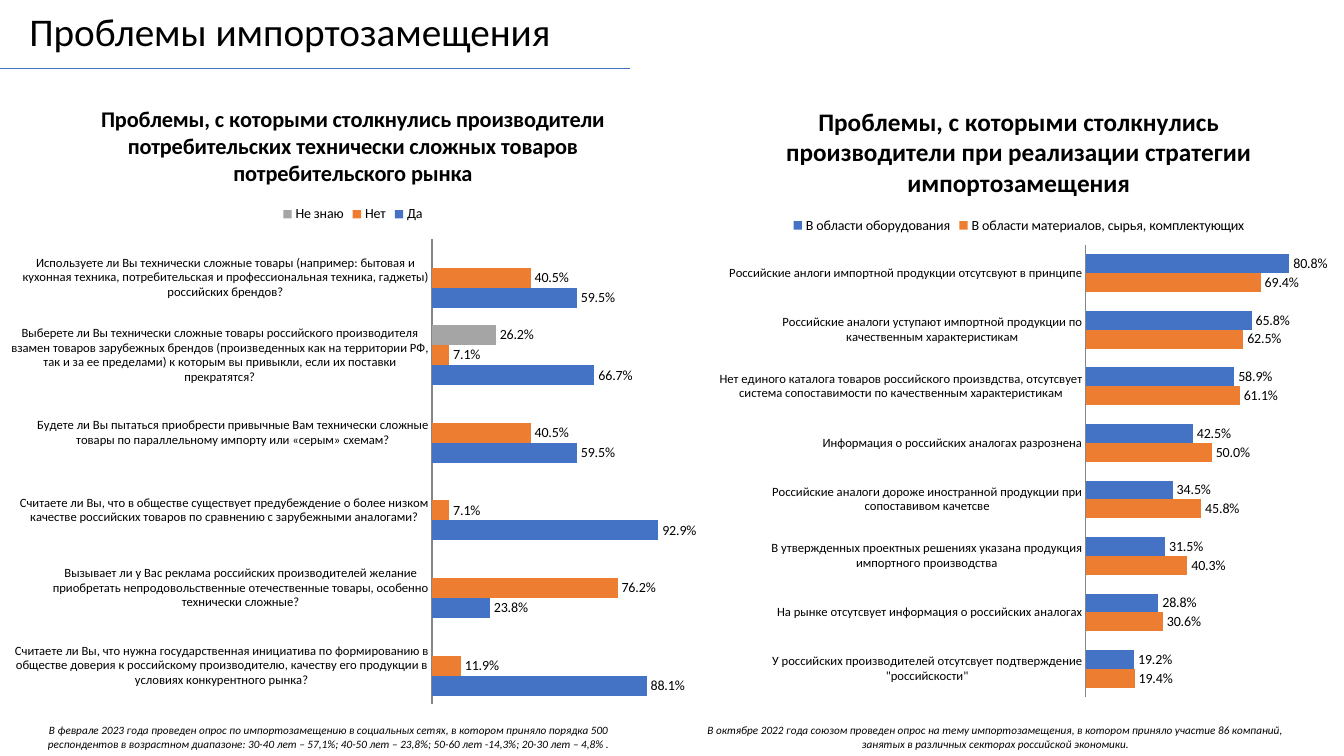
from lxml import etree
from pptx import Presentation
from pptx.chart.data import CategoryChartData
from pptx.dml.color import RGBColor
from pptx.enum.chart import XL_CHART_TYPE, XL_LABEL_POSITION, XL_LEGEND_POSITION, XL_TICK_MARK
from pptx.enum.shapes import MSO_CONNECTOR
from pptx.enum.text import MSO_ANCHOR, MSO_AUTO_SIZE, PP_ALIGN
from pptx.oxml.ns import qn
from pptx.util import Inches, Pt

FONT = "Calibri"
BLACK = RGBColor(0x00, 0x00, 0x00)
BLUE = RGBColor(0x44, 0x72, 0xC4)
ORANGE = RGBColor(0xED, 0x7D, 0x31)
GRAY = RGBColor(0xA5, 0xA5, 0xA5)
AXIS_GRAY = RGBColor(0x86, 0x86, 0x86)

CONSUMER = {
    "title": "Проблемы, с которыми столкнулись производители потребительских "
             "технически сложных товаров потребительского рынка",
    "title_size": 16,
    "gap": 87,
    "maximum": 1.0,
    "cats": [
        "Считаете ли Вы, что нужна государственная инициатива по формированию в обществе "
        "доверия к российскому производителю, качеству его продукции в условиях "
        "конкурентного рынка?",
        "Вызывает ли у Вас реклама российских производителей желание приобретать "
        "непродовольственные отечественные товары, особенно технически сложные?",
        "Считаете ли Вы, что в обществе существует предубеждение о более низком качестве "
        "российских товаров по сравнению с зарубежными аналогами?",
        "Будете ли Вы пытаться приобрести привычные Вам технически сложные товары по "
        "параллельному импорту или «серым» схемам?",
        "Выберете ли Вы технически сложные товары российского производителя взамен товаров "
        "зарубежных брендов (произведенных как на территории РФ, так и за ее пределами) "
        "к которым вы привыкли, если их поставки прекратятся?",
        "Используете ли Вы технически сложные товары (например: бытовая и кухонная техника, "
        "потребительская и профессиональная техника, гаджеты) российских брендов?",
    ],
    "series": [
        ("Да", BLUE, [0.881, 0.238, 0.929, 0.595, 0.667, 0.595]),
        ("Нет", ORANGE, [0.119, 0.762, 0.071, 0.405, 0.071, 0.405]),
        ("Не знаю", GRAY, [None, None, None, None, 0.262, None]),
    ],
}

STRATEGY = {
    "title": "Проблемы, с которыми столкнулись производители при реализации стратегии "
             "импортозамещения",
    "title_size": 18,
    "gap": 100,
    "maximum": 0.9,
    "cats": [
        "У российских производителей отсутсвует подтверждение \"российскости\"",
        "На рынке отсутсвует информация о российских аналогах",
        "В утвержденных проектных решениях указана продукция импортного производства",
        "Российские аналоги дороже иностранной продукции при сопоставивом качетсве",
        "Информация о российских аналогах разрознена",
        "Нет единого каталога товаров российского произвдства, отсутсвует система "
        "сопоставимости по качественным характеристикам",
        "Российские аналоги уступают импортной продукции по качественным характеристикам",
        "Российские анлоги импортной продукции отсутсвуют в принципе",
    ],
    "series": [
        ("В области материалов, сырья, комплектующих", ORANGE,
         [0.194, 0.306, 0.403, 0.458, 0.5, 0.611, 0.625, 0.694]),
        ("В области оборудования", BLUE,
         [0.192, 0.288, 0.315, 0.345, 0.425, 0.589, 0.658, 0.808]),
    ],
}

CONSUMER_NOTE = (
    "В феврале 2023 года проведен опрос по импортозамещению в социальных сетях, в котором "
    "приняло порядка 500 респондентов в возрастном диапазоне: 30-40 лет – 57,1%; "
    "40-50 лет – 23,8%; 50-60 лет -14,3%; 20-30 лет – 4,8% .")
STRATEGY_NOTE = (
    "В октябре 2022 года союзом проведен опрос на тему импортозамещения, в котором приняло "
    "участие 86 компаний, занятых в различных секторах российской экономики.")


def style_font(font, size, bold=False, italic=False):
    """Apply the slide's font with the given size and emphasis."""
    font.name, font.size = FONT, Pt(size)
    font.bold, font.italic = bold, italic
    font.color.rgb = BLACK


def add_header(s, x, y, w, h):
    """Place the slide title and the rule below it."""
    sp = s.shapes.title
    sp.left, sp.top, sp.width, sp.height = (Inches(v) for v in (x, y, w, h))
    tf = sp.text_frame
    tf.word_wrap = False
    tf.auto_size = MSO_AUTO_SIZE.NONE
    tf.vertical_anchor = MSO_ANCHOR.TOP
    p = tf.paragraphs[0]
    p.alignment = PP_ALIGN.LEFT
    r = p.add_run()
    r.text = "Проблемы импортозамещения"
    style_font(r.font, 28)
    rule_y = Inches(y + h + 0.09)
    line = s.shapes.add_connector(MSO_CONNECTOR.STRAIGHT, 0, rule_y, Inches(6.25), rule_y)
    line.line.color.rgb = BLUE
    line.line.width = Pt(1)
    etree.SubElement(line._element.spPr, qn("a:effectLst"))


def set_plot_box(chart, box, plot_box):
    """Fix the inner plot area inside the chart box."""
    x, y, w, h = box
    px, py, pw, ph = plot_box
    area = chart._chartSpace.chart.plotArea
    layout = area.find(qn("c:layout"))
    if layout is None:
        layout = etree.Element(qn("c:layout"))
        area.insert(0, layout)
    manual = etree.SubElement(layout, qn("c:manualLayout"))
    values = [("layoutTarget", "inner"), ("xMode", "edge"), ("yMode", "edge"),
              ("x", (px - x) / w), ("y", (py - y) / h), ("w", pw / w), ("h", ph / h)]
    for name, value in values:
        etree.SubElement(manual, qn(f"c:{name}")).set("val", str(value))


def add_survey_chart(s, box, plot_box, survey):
    """Place a clustered bar chart of survey answers in the box."""
    data = CategoryChartData(number_format="0.0%")
    data.categories = survey["cats"]
    for name, _, values in survey["series"]:
        data.add_series(name, values)
    chart = s.shapes.add_chart(
        XL_CHART_TYPE.BAR_CLUSTERED, *(Inches(v) for v in box), data).chart
    style_font(chart.font, 10)

    chart.has_title = True
    chart.chart_title.include_in_layout = False
    p = chart.chart_title.text_frame.paragraphs[0]
    r = p.add_run()
    r.text = survey["title"]
    style_font(r.font, survey["title_size"], bold=True)

    chart.has_legend = True
    chart.legend.position = XL_LEGEND_POSITION.TOP
    chart.legend.include_in_layout = False
    style_font(chart.legend.font, 10)

    cat_axis, val_axis = chart.category_axis, chart.value_axis
    cat_axis.major_tick_mark = XL_TICK_MARK.NONE
    cat_axis.format.line.color.rgb = AXIS_GRAY
    style_font(cat_axis.tick_labels.font, 9)
    val_axis.visible = False
    val_axis.has_major_gridlines = False
    val_axis.minimum_scale, val_axis.maximum_scale = 0, survey["maximum"]

    plot = chart.plots[0]
    plot.gap_width, plot.overlap = survey["gap"], 0
    plot.vary_by_categories = False
    for series, (_, color, _) in zip(plot.series, survey["series"]):
        series.format.fill.solid()
        series.format.fill.fore_color.rgb = color
        labels = series.data_labels
        labels.show_value = True
        labels.number_format = "0.0%"
        labels.number_format_is_linked = False
        labels.position = XL_LABEL_POSITION.OUTSIDE_END
        style_font(labels.font, 10)
    set_plot_box(chart, box, plot_box)


def add_note(s, x, y, w, h, text):
    """Place a centred italic survey note in the box."""
    tf = s.shapes.add_textbox(*(Inches(v) for v in (x, y, w, h))).text_frame
    tf.word_wrap = True
    p = tf.paragraphs[0]
    p.alignment = PP_ALIGN.CENTER
    r = p.add_run()
    r.text = text
    style_font(r.font, 8, italic=True)


def main():
    """Build and save the slide."""
    prs = Presentation()
    prs.slide_width, prs.slide_height = Inches(13.33), Inches(7.5)
    s = prs.slides.add_slide(prs.slide_layouts[5])
    add_survey_chart(s, (7.03, 0.81, 6.15, 6.23), (10.77, 2.43, 2.25, 4.49), STRATEGY)
    add_survey_chart(s, (0.1, 0.81, 6.81, 6.3), (4.29, 2.37, 2.42, 4.62), CONSUMER)
    add_note(s, 0.26, 7.13, 6.01, 0.37, CONSUMER_NOTE)
    add_note(s, 6.73, 7.13, 6.29, 0.37, STRATEGY_NOTE)
    add_header(s, 0.19, 0.02, 5.43, 0.57)
    prs.save("out.pptx")


if __name__ == "__main__":
    main()
